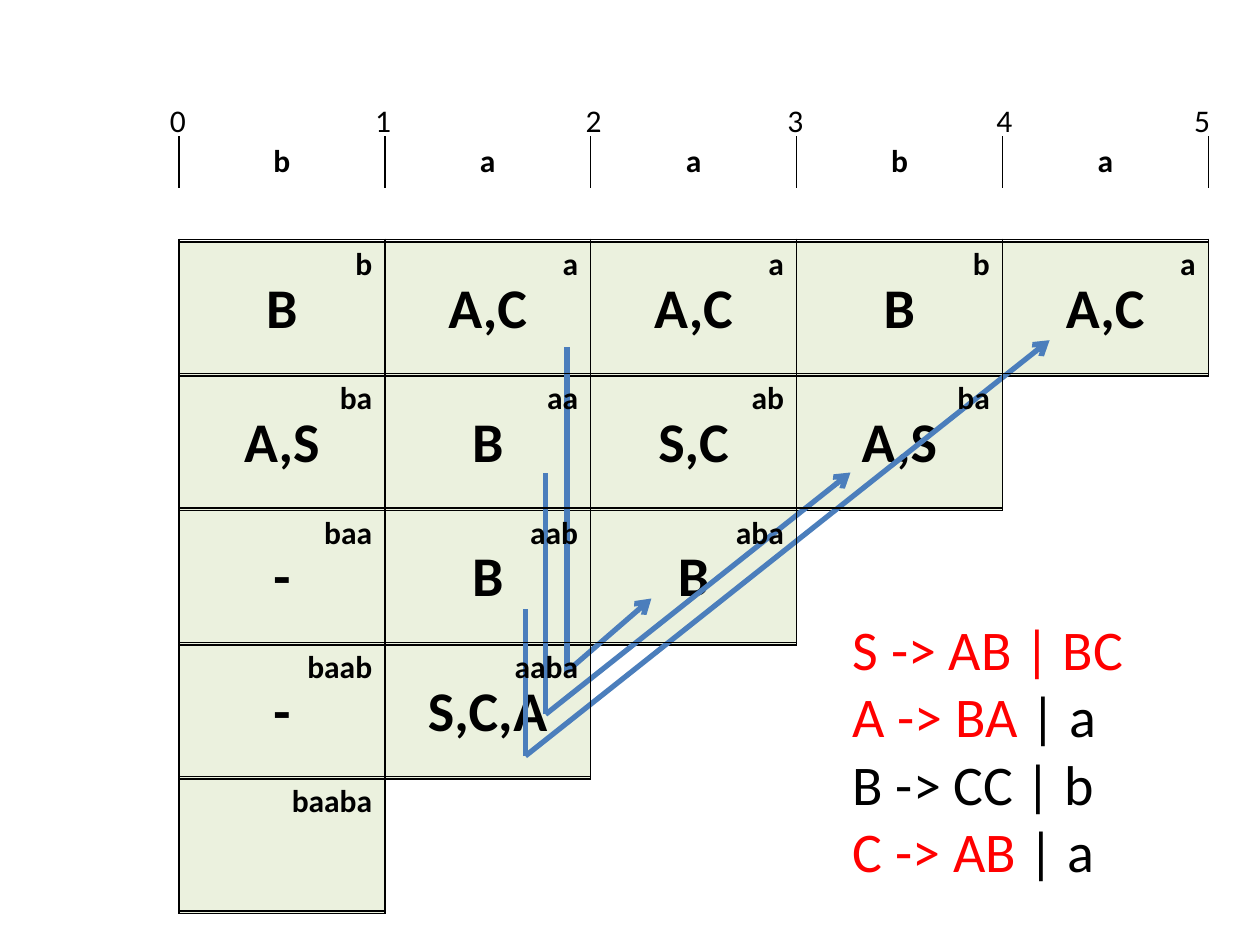
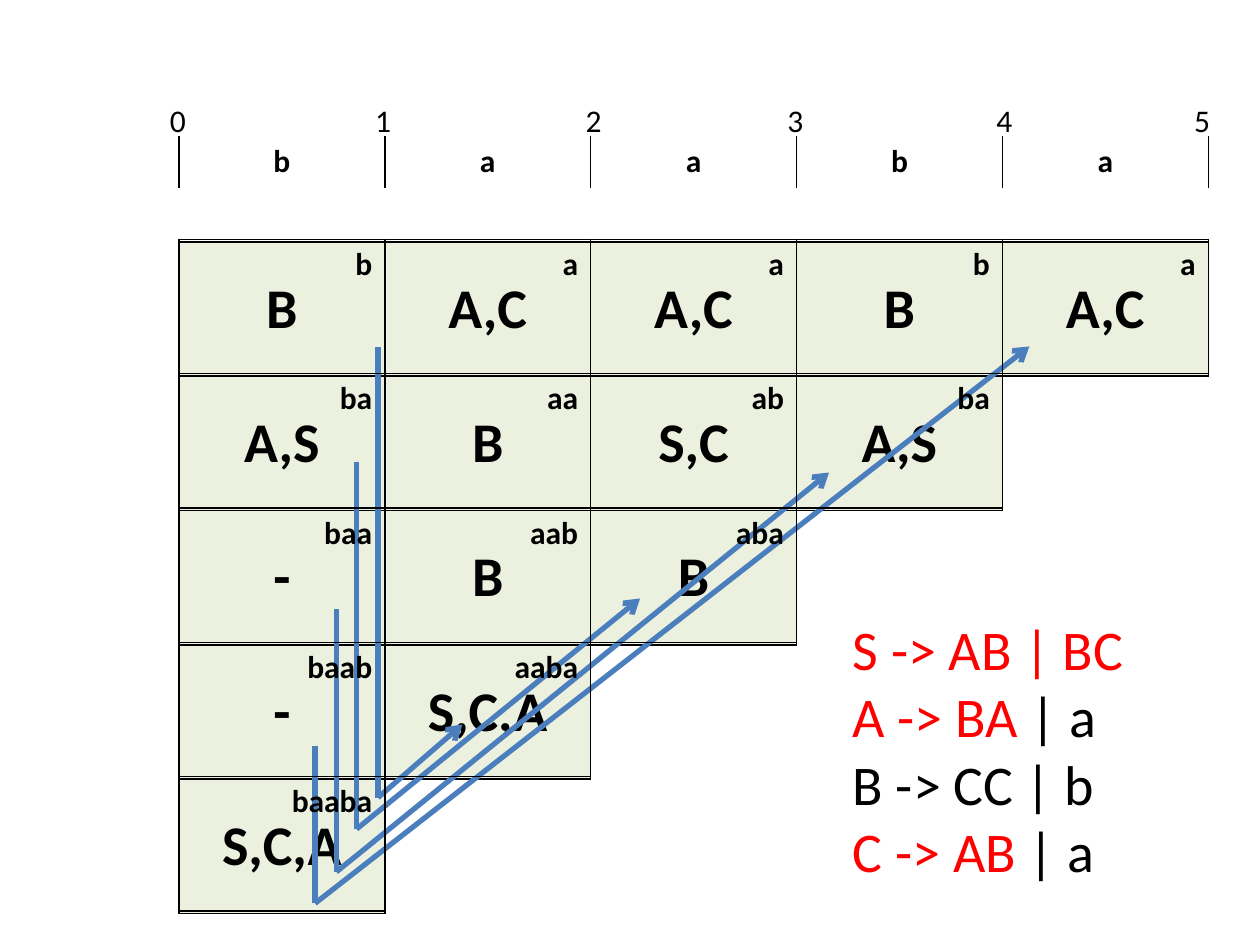
from lxml.etree import SubElement
from pptx import Presentation
from pptx.dml.color import RGBColor
from pptx.enum.shapes import MSO_CONNECTOR as Connector
from pptx.enum.text import MSO_ANCHOR as Anchor, MSO_AUTO_SIZE as AutoSize, PP_ALIGN as Align
from pptx.oxml.ns import qn
from pptx.util import Inches, Pt

BLACK = RGBColor(0x00, 0x00, 0x00)
WHITE = RGBColor(0xFF, 0xFF, 0xFF)
RED = RGBColor(0xFF, 0x00, 0x00)
BLUE = RGBColor(0x4B, 0x7E, 0xBC)
PALE_GREEN = RGBColor(0xEB, 0xF1, 0xDE)
FONT = "Calibri"
PLAIN_TABLE = "{2D5ABB26-0587-4C30-8999-92F81FD0307C}"

WORD = "baaba"
SIZE = len(WORD)
HEADER_BOX = (1.42, 1.08, 8.17, 0.41)
INDEX_BOX = (1.25, 0.75, 8.5, 0.4)
CHART_BOX = (1.42, 1.92, 8.17, 5.33)
LABEL_BOX = (1.42, 1.9, 8.17, 5.33)
GRAMMAR_BOX = (6.67, 4.83, 2.92, 2.26)
INDEX_STOPS = (1.63, 3.3, 4.9, 6.56, 8.13)

CHART = [
    ["B", "A,C", "A,C", "B", "A,C"],
    ["A,S", "B", "S,C", "A,S"],
    ["-", "B", "B"],
    ["-", "S,C,A"],
]
LABELS = [[WORD[start:start + length] for start in range(SIZE - length + 1)]
          for length in range(1, SIZE + 1)]
GRAMMAR = [
    [("S -> AB | BC", RED)],
    [("A -> BA ", RED), ("| a", BLACK)],
    [("B -> CC | b", BLACK)],
    [("C -> AB ", RED), ("| a", BLACK)],
]

# Each entry holds the corner, the top of the stem and the arrow tip.
STEPS = [
    ("", [
        ((4.5, 5.33), 2.75, (5.17, 4.75)),
        ((4.33, 5.67), 3.75, (6.75, 3.75)),
        ((4.17, 6), 4.83, (8.33, 2.7)),
    ]),
    ("S,C,A", [
        ((3, 6.33), 2.75, (3.67, 5.75)),
        ((2.83, 6.58), 3.67, (5.08, 4.75)),
        ((2.67, 6.92), 4.83, (6.58, 3.75)),
        ((2.5, 7.17), 5.92, (8.17, 2.75)),
    ]),
]


def style_span(span, size, color=BLACK, bold=False):
    """Set the font of one run."""
    span.font.name = FONT
    span.font.size = Pt(size)
    span.font.bold = bold
    span.font.color.rgb = color


def add_borders(cell, sides):
    """Draw thin black borders on the named sides of a cell."""
    properties = cell._tc.get_or_add_tcPr()
    for side in sides:
        line = SubElement(properties, qn(f"a:ln{side}"), w=str(Pt(1)))
        fill = SubElement(line, qn("a:solidFill"))
        SubElement(fill, qn("a:srgbClr"), val=str(BLACK))


def add_grid(page, box, rows, size, align, anchor=Anchor.TOP, fill=None, sides="LRTB"):
    """Add a table whose rows may be shorter than its width."""
    left, top, width, height = map(Inches, box)
    frame = page.shapes.add_table(len(rows), SIZE, left, top, width, height)
    table = frame.table
    table.first_row = table.horz_banding = False
    for style in frame.element.iter(qn("a:tableStyleId")):
        style.text = PLAIN_TABLE
    for row, texts in enumerate(rows):
        for column in range(SIZE):
            cell = table.cell(row, column)
            if column >= len(texts):
                cell.fill.background()
                continue
            add_borders(cell, sides)
            if fill is None:
                cell.fill.background()
            else:
                cell.fill.solid()
                cell.fill.fore_color.rgb = fill
            cell.vertical_anchor = anchor
            para = cell.text_frame.paragraphs[0]
            para.text = texts[column]
            para.alignment = align
            for span in para.runs:
                style_span(span, size, bold=True)


def add_line(page, start, end, arrow=False):
    """Add a blue line, with an open arrowhead at its end if asked."""
    line = page.shapes.add_connector(Connector.STRAIGHT, *map(Inches, start + end))
    line.line.color.rgb = BLUE
    line.line.width = Pt(3)
    if arrow:
        SubElement(line.line._get_or_add_ln(), qn("a:tailEnd"), type="arrow")
    SubElement(line.element.spPr, qn("a:effectLst"))


def add_splits(page, splits):
    """Join each pair of cells with a stem and an arrow."""
    for corner, stem_top, tip in splits:
        add_line(page, corner, (corner[0], stem_top))
        add_line(page, corner, tip, arrow=True)


def add_text_frame(page, box):
    """Add a wrapping text box and return its text frame."""
    frame = page.shapes.add_textbox(*map(Inches, box)).text_frame
    frame.word_wrap = True
    frame.auto_size = AutoSize.SHAPE_TO_FIT_TEXT
    return frame


def add_grammar(page, box):
    """List the grammar rules, one paragraph each."""
    frame = add_text_frame(page, box)
    for number, rule in enumerate(GRAMMAR):
        para = frame.add_paragraph() if number else frame.paragraphs[0]
        for text, color in rule:
            span = para.add_run()
            span.text = text
            style_span(span, 32, color)


def add_indices(page, box):
    """Number the gaps between the letters, set on tab stops."""
    para = add_text_frame(page, box).paragraphs[0]
    para.text = "\t".join(str(index) for index in range(SIZE + 1))
    style_span(para.runs[0], 18)
    stops = SubElement(para._p.get_or_add_pPr(), qn("a:tabLst"))
    for stop in INDEX_STOPS:
        SubElement(stops, qn("a:tab"), pos=str(Inches(stop)), algn="l")


def add_step(deck, result, splits):
    """Build one slide of the parse, with the last cell and its splits."""
    page = deck.slides.add_slide(deck.slide_layouts[6])
    add_grid(page, CHART_BOX, CHART + [[result]], 32, Align.CENTER, Anchor.MIDDLE, PALE_GREEN)
    add_splits(page, splits)
    add_grammar(page, GRAMMAR_BOX)
    add_grid(page, HEADER_BOX, [WORD], 18, Align.CENTER, fill=WHITE, sides="LR")
    add_indices(page, INDEX_BOX)
    add_grid(page, LABEL_BOX, LABELS, 18, Align.RIGHT)


def main():
    """Build and save the deck."""
    deck = Presentation()
    deck.slide_width, deck.slide_height = Inches(10), Inches(7.5)
    for result, splits in STEPS:
        add_step(deck, result, splits)
    deck.save("out.pptx")


if __name__ == "__main__":
    main()
